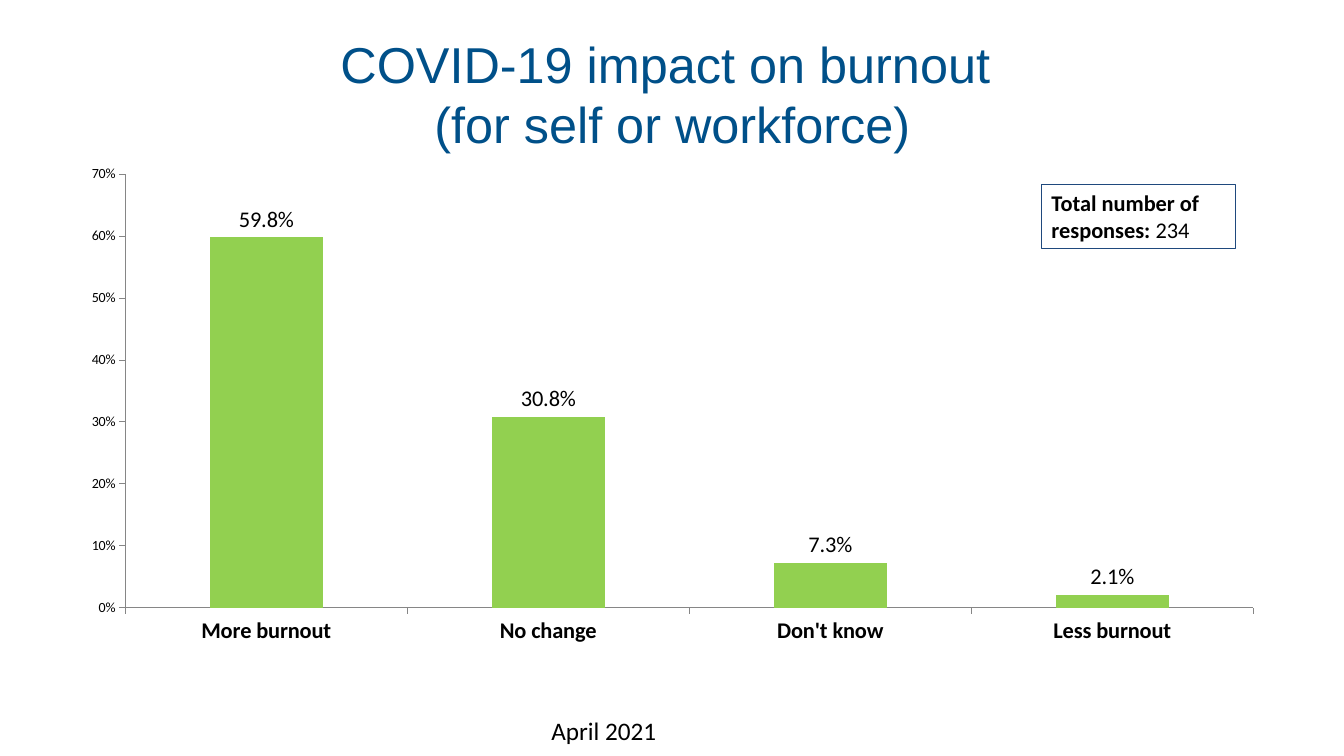
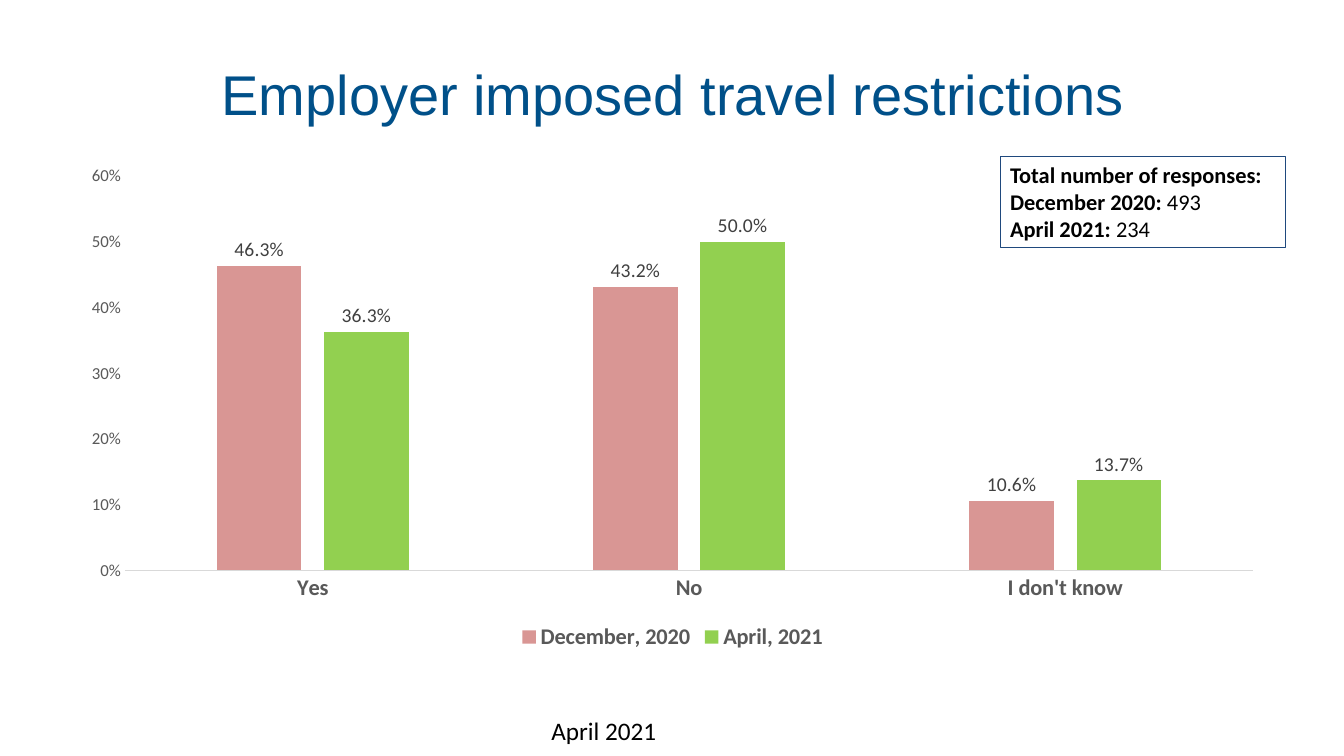
from pptx import Presentation
from pptx.chart.data import CategoryChartData
from pptx.dml.color import RGBColor
from pptx.enum.chart import XL_CHART_TYPE, XL_LABEL_POSITION, XL_LEGEND_POSITION, XL_TICK_MARK
from pptx.enum.shapes import MSO_SHAPE
from pptx.enum.text import MSO_ANCHOR, PP_ALIGN
from pptx.util import Inches, Pt

COLORS = {
    "title": "005089", "text": "000000", "outline": "1F497D",
    "green": "92D050", "rose": "D99694",
    "axis": "868686", "pale_axis": "D9D9D9", "gray": "595959", "label": "404040",
}
WIDTH, HEIGHT = 13.33, 7.5
MARGIN = 0.67
CONTENT_W = 12
TITLE_BOX = (MARGIN, 0.3, CONTENT_W, 1.25)
CHART_BOX = (MARGIN, 1.55, CONTENT_W, 4.95)
FOOTER_BOX = (5.37, 7.05, 4.22, 0.4)
FOOTER = "April 2021"

SLIDES = [
    {
        "title": "COVID-19 impact on burnout \v(for self or workforce)",
        "title_size": 36,
        "categories": ["More burnout", "No change", "Don't know", "Less burnout"],
        "series": [("Series 1", [0.598, 0.308, 0.073, 0.021], "green")],
        "gap": 150, "overlap": 0, "legend": False, "max": 0.7,
        "tick": XL_TICK_MARK.OUTSIDE, "category_line": "axis", "value_line": "axis",
        "axis_text": "text", "value_size": 10,
        "label_text": "text", "label_size": 16,
        "note_box": (10.33, 1.83, 1.92, 0.64),
        "note": [("Total number of responses: ", "234")],
    },
    {
        "title": "Employer imposed travel restrictions",
        "title_size": 40,
        "categories": ["Yes", "No", "I don't know"],
        "series": [("December, 2020", [0.463, 0.432, 0.106], "rose"),
                   ("April, 2021", [0.363, 0.5, 0.137], "green")],
        "gap": 219, "overlap": -27, "legend": True, "max": 0.6,
        "tick": XL_TICK_MARK.NONE, "category_line": "pale_axis", "value_line": None,
        "axis_text": "gray", "value_size": 12,
        "label_text": "label", "label_size": 14,
        "note_box": (9.92, 1.55, 2.83, 0.91),
        "note": [("Total number of responses:", ""),
                 ("December 2020: ", "493"), ("April 2021: ", "234")],
    },
]


def rgb(name):
    return RGBColor.from_string(COLORS[name])


def inches(box):
    return [Inches(v) for v in box]


def set_font(font, size, color="text", bold=False, name="Calibri"):
    font.name, font.size, font.bold = name, Pt(size), bold
    font.color.rgb = rgb(color)


def add_text(s, box, text, size, color="text", name="Calibri",
             align=PP_ALIGN.LEFT, anchor=MSO_ANCHOR.TOP):
    tf = s.shapes.add_textbox(*inches(box)).text_frame
    tf.word_wrap = True
    tf.vertical_anchor = anchor
    p = tf.paragraphs[0]
    p.text = text
    p.alignment = align
    set_font(p.font, size, color, name=name)
    for r in p.runs:
        set_font(r.font, size, color, name=name)


def style_axis(axis, tick, line, size, color, bold=False):
    axis.has_major_gridlines = False
    axis.major_tick_mark = tick
    axis.minor_tick_mark = XL_TICK_MARK.NONE
    set_font(axis.tick_labels.font, size, color, bold)
    if line:
        axis.format.line.color.rgb = rgb(line)
        axis.format.line.width = Pt(0.75)
    else:
        axis.format.line.fill.background()


def add_column_chart(s, d):
    data = CategoryChartData(number_format="0.0%")
    data.categories = d["categories"]
    for name, values, _ in d["series"]:
        data.add_series(name, values)
    chart = s.shapes.add_chart(XL_CHART_TYPE.COLUMN_CLUSTERED, *inches(CHART_BOX), data).chart
    set_font(chart.font, 10)
    chart.has_title = False
    chart.has_legend = d["legend"]
    if d["legend"]:
        chart.legend.position = XL_LEGEND_POSITION.BOTTOM
        chart.legend.include_in_layout = False
        set_font(chart.legend.font, 16, d["axis_text"], True)

    style_axis(chart.category_axis, d["tick"], d["category_line"], 16, d["axis_text"], True)
    values = chart.value_axis
    style_axis(values, d["tick"], d["value_line"], d["value_size"], d["axis_text"])
    values.minimum_scale, values.maximum_scale, values.major_unit = 0, d["max"], 0.1
    values.tick_labels.number_format = "0%"
    values.tick_labels.number_format_is_linked = False

    plot = chart.plots[0]
    plot.vary_by_categories = False
    plot.gap_width, plot.overlap = d["gap"], d["overlap"]
    for series, (_, _, color) in zip(plot.series, d["series"]):
        series.format.fill.solid()
        series.format.fill.fore_color.rgb = rgb(color)
        labels = series.data_labels
        labels.show_value = True
        labels.number_format = "0.0%"
        labels.number_format_is_linked = False
        labels.position = XL_LABEL_POSITION.OUTSIDE_END
        set_font(labels.font, d["label_size"], d["label_text"])


def add_note(s, box, lines):
    """Outlined box of lines, each a bold label with a plain count."""
    sp = s.shapes.add_shape(MSO_SHAPE.RECTANGLE, *inches(box))
    sp.shadow.inherit = False
    sp.fill.background()
    sp.line.color.rgb = rgb("outline")
    sp.line.width = Pt(0.75)
    tf = sp.text_frame
    tf.word_wrap = True
    tf.vertical_anchor = MSO_ANCHOR.TOP
    for i, (label, count) in enumerate(lines):
        p = tf.add_paragraph() if i else tf.paragraphs[0]
        p.alignment = PP_ALIGN.LEFT
        for text, bold in ((label, True), (count, False)):
            if text:
                r = p.add_run()
                r.text = text
                set_font(r.font, 16, bold=bold)


def main():
    prs = Presentation()
    prs.slide_width, prs.slide_height = Inches(WIDTH), Inches(HEIGHT)
    for d in SLIDES:
        s = prs.slides.add_slide(prs.slide_layouts[6])
        add_text(s, TITLE_BOX, d["title"], d["title_size"], "title", "Arial",
                 PP_ALIGN.CENTER, MSO_ANCHOR.MIDDLE)
        add_text(s, FOOTER_BOX, FOOTER, 18)
        add_column_chart(s, d)
        add_note(s, d["note_box"], d["note"])
    prs.save("out.pptx")


if __name__ == "__main__":
    main()
